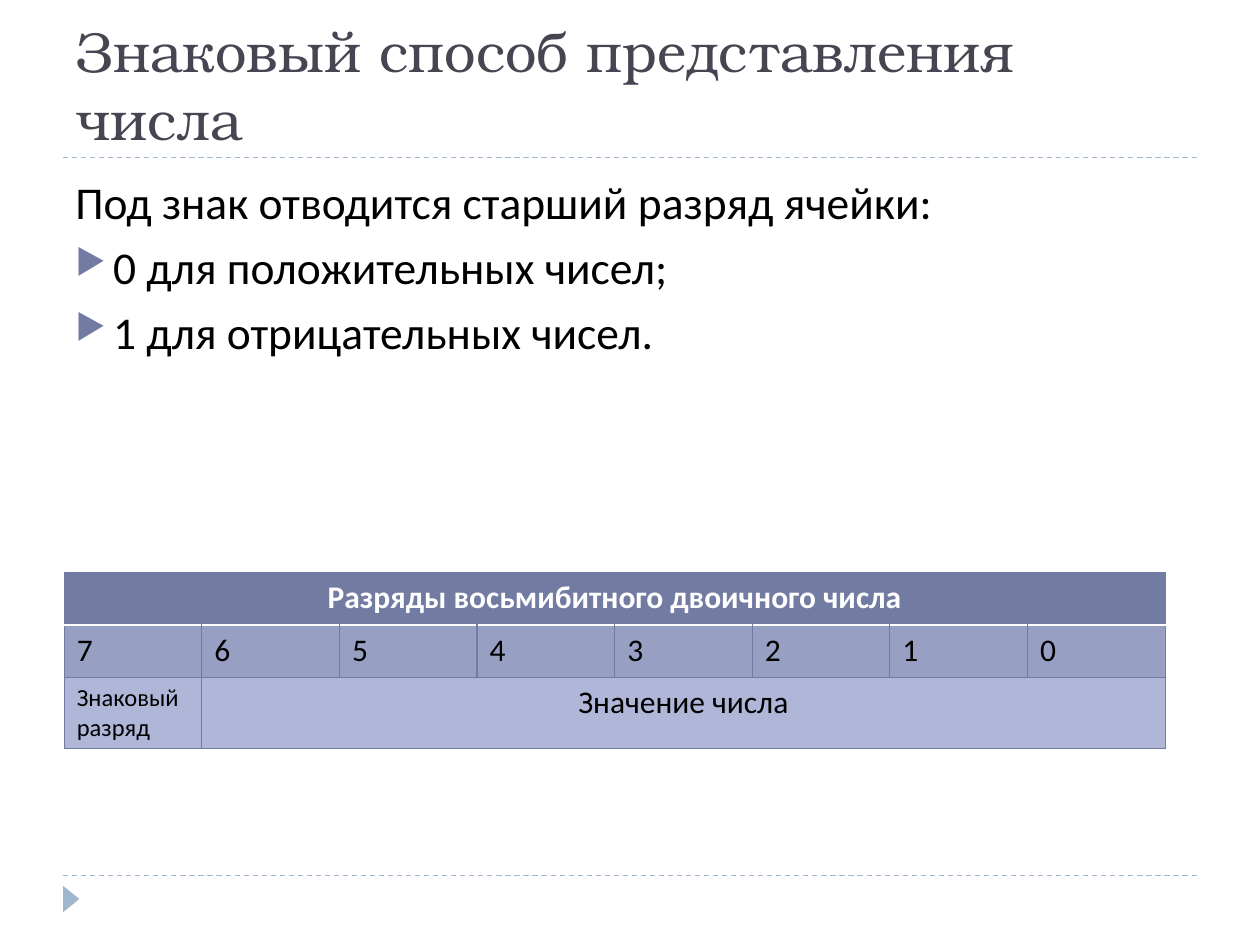
from lxml import etree
from pptx import Presentation
from pptx import util as u
from pptx.dml.color import RGBColor
from pptx.enum import dml, shapes, text
from pptx.oxml.ns import qn

DARK = RGBColor(0x46, 0x46, 0x53)
BLUE = RGBColor(0x72, 0x7C, 0xA3)
MID = RGBColor(0x97, 0x9F, 0xC3)
PALE = RGBColor(0xB0, 0xB6, 0xD7)
SKY = RGBColor(0x9F, 0xB8, 0xCD)
BLACK = RGBColor(0, 0, 0)
WHITE = RGBColor(255, 255, 255)

# Grid: 20 columns by 90 rows
COL = u.Inches(10) / 20
ROW = u.Inches(7.5) / 90


def grid(x, y, w, h):
    return int(x * COL), int(y * ROW), int(w * COL), int(h * ROW)


def style(para, size, color, font="Calibri", bold=False):
    for run in para.runs:
        run.font.size = u.Pt(size)
        run.font.name = font
        run.font.bold = bold
        run.font.color.rgb = color


def sub(node, tag, **attrs):
    return etree.SubElement(node, qn(tag), attrs)


def add_text(slide, box, lines):
    frame = slide.shapes.add_textbox(*box).text_frame
    frame.word_wrap = True
    frame.text = "\n".join(lines)
    return frame


def add_rule(slide, box):
    x, y, w, _ = box
    line = slide.shapes.add_connector(
        shapes.MSO_CONNECTOR.STRAIGHT, x, y, x + w, y)
    line.line.color.rgb = SKY
    line.line.width = u.Pt(0.75)
    line.line.dash_style = dml.MSO_LINE.DASH
    sub(line._element.spPr, "a:effectLst")


def add_mark(slide, box):
    mark = slide.shapes.add_shape(
        shapes.MSO_SHAPE.ISOSCELES_TRIANGLE, *box)
    mark.rotation = 90
    mark.shadow.inherit = False
    mark.fill.solid()
    mark.fill.fore_color.rgb = SKY
    mark.line.fill.background()


def add_title(slide, box):
    frame = add_text(slide, box, ["Знаковый способ представления числа"])
    frame.vertical_anchor = text.MSO_ANCHOR.BOTTOM
    style(frame.paragraphs[0], 32, DARK, "TeX Gyre Bonum")


def add_body(slide, box):
    frame = add_text(slide, box, [
        "Под знак отводится старший разряд ячейки:",
        "0 для положительных чисел;",
        "1 для отрицательных чисел.",
    ])
    for i, para in enumerate(frame.paragraphs):
        para.space_before = u.Pt(6)
        style(para, 26, BLACK)
        if i:
            add_bullet(para)


def add_bullet(para):
    props = para._p.get_or_add_pPr()
    props.set("marL", str(u.Inches(0.3)))
    props.set("indent", str(-u.Inches(0.3)))
    sub(sub(props, "a:buClr"), "a:srgbClr", val=str(BLUE))
    sub(props, "a:buSzPct", val="76000")
    sub(props, "a:buChar", char="▶")


def set_edge(cell, side, color, width):
    line = sub(cell._tc.get_or_add_tcPr(), "a:ln" + side,
               w=str(u.Pt(width)))
    sub(sub(line, "a:solidFill"), "a:srgbClr", val=str(color))


def add_bits(slide, box):
    rows = [["Разряды восьмибитного двоичного числа"],
            list("76543210"),
            ["Знаковый разряд", "Значение числа"]]
    fills = [BLUE, MID, PALE]
    table = slide.shapes.add_table(3, 8, *box).table
    for row, high in zip(table.rows, (5, 5, 6.8)):
        row.height = int(high * ROW)
    for r, words in enumerate(rows):
        for c in range(8):
            cell = table.cell(r, c)
            # Borders go before the fill in the cell properties
            for side in "LRTB":
                split = (r, side) in ((0, "B"), (1, "T"))
                set_edge(cell, side, WHITE if split else BLUE,
                         1.5 if split else 0.75)
            cell.fill.solid()
            cell.fill.fore_color.rgb = fills[r]
            if c < len(words):
                cell.text = words[c]
                para = cell.text_frame.paragraphs[0]
                style(para, 14 if (r, c) == (2, 0) else 18,
                      BLACK if r else WHITE, bold=r == 0)
    # Wide cells
    for r, c in ((0, 0), (2, 1)):
        wide = table.cell(r, c)
        wide.merge(table.cell(r, 7))
        wide.text_frame.paragraphs[0].alignment = text.PP_ALIGN.CENTER


def main():
    deck = Presentation()
    deck.slide_width, deck.slide_height = int(20 * COL), int(90 * ROW)
    slide = deck.slides.add_slide(deck.slide_layouts[6])
    for y in (83.4, 15):
        add_rule(slide, grid(1, y, 18, 0))
    add_mark(slide, grid(0.92, 84.84, 0.42, 1.56))
    add_title(slide, grid(1, 2, 18, 13))
    add_body(slide, grid(1, 16, 18, 64.8))
    add_bits(slide, grid(1.02, 54.5, 17.48, 16.8))
    deck.save("out.pptx")


if __name__ == "__main__":
    main()
